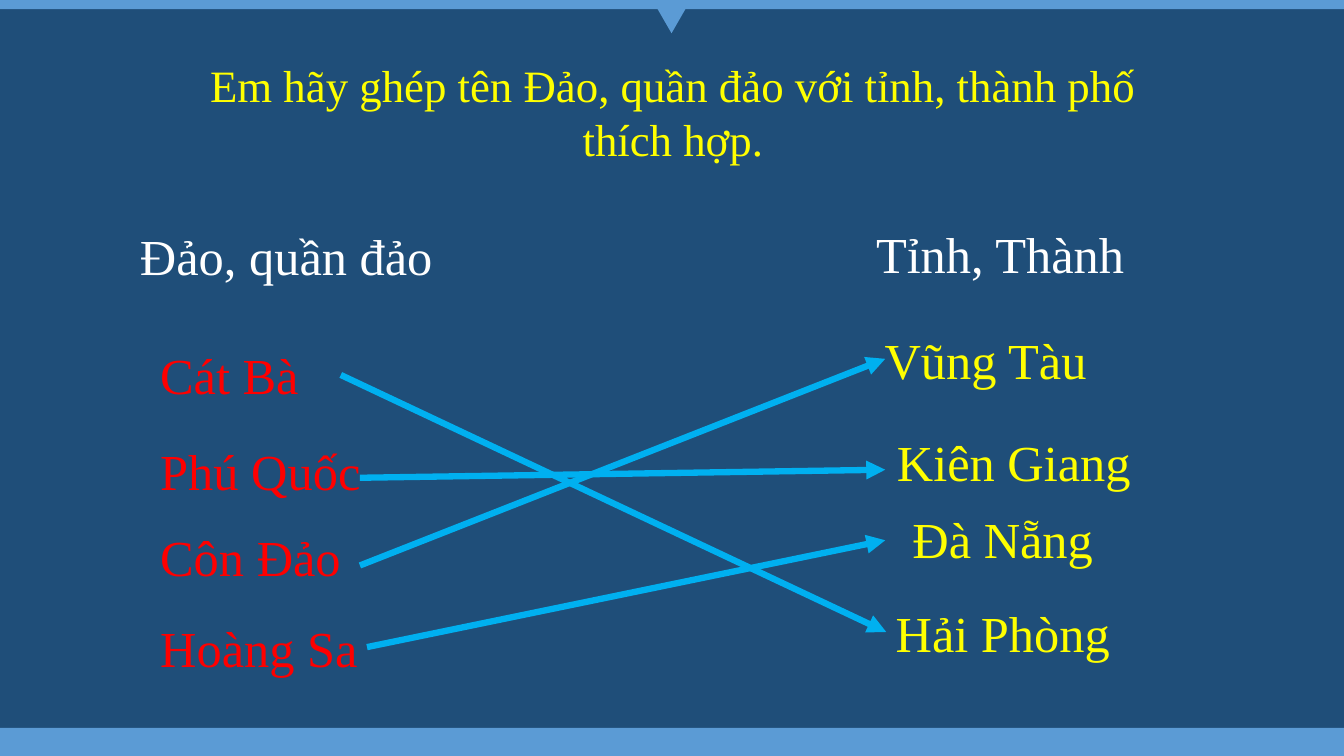
from dataclasses import dataclass
from typing import Any

import lxml.etree
import pptx
import pptx.dml.color
import pptx.enum.shapes
import pptx.enum.text
import pptx.oxml.ns
import pptx.util

Inches = pptx.util.Inches
SHAPES = pptx.enum.shapes.MSO_SHAPE
ALIGN = pptx.enum.text.PP_ALIGN

NAVY, SKY, ARROW_BLUE = "1F4E79", "5B9BD5", "00B0F0"
YELLOW, RED, WHITE = "FFFF00", "FF0000", "FFFFFF"
SLIDE_WIDTH, SLIDE_HEIGHT = 13.33, 7.5
LABEL_HEIGHT = 0.71


@dataclass
class Label:
    text: str
    left: float
    top: float
    width: float
    color: str
    align: Any = ALIGN.LEFT


@dataclass
class Band:
    kind: Any
    left: float
    top: float
    width: float
    height: float
    rotation: float = 0


@dataclass
class Match:
    start: tuple[float, float]
    end: tuple[float, float]


ISLANDS = [("Cát Bà", 3.36), ("Phú Quốc", 4.32), ("Côn Đảo", 5.17), ("Hoàng Sa", 6.07)]

LABELS = [
    Label("Đảo, quần đảo", 1.29, 2.18, 3.27, WHITE),
    Label("Tỉnh, Thành", 8.59, 2.16, 3.08, WHITE),
    *(Label(island, 1.49, top, 2.55, RED) for island, top in ISLANDS),
    Label("Vũng Tàu", 8.59, 3.22, 2.37, YELLOW, ALIGN.CENTER),
    Label("Kiên Giang", 8.78, 4.23, 2.55, YELLOW, ALIGN.CENTER),
    Label("Đà Nẵng", 8.67, 4.99, 2.55, YELLOW, ALIGN.CENTER),
    Label("Hải Phòng", 8.67, 5.92, 2.55, YELLOW, ALIGN.CENTER),
]

BANDS = [
    Band(SHAPES.RECTANGLE, 0, 7.22, SLIDE_WIDTH, 0.28),
    Band(SHAPES.RECTANGLE, 0, 0, SLIDE_WIDTH, 0.09),
    Band(SHAPES.ISOSCELES_TRIANGLE, 6.47, 0, 0.38, 0.33, 180),
]

MATCHES = [
    Match((3.38, 3.72), (8.79, 6.27)),
    Match((3.57, 4.74), (8.78, 4.66)),
    Match((3.57, 5.61), (8.78, 3.56)),
    Match((3.64, 6.42), (8.78, 5.36)),
]


def rgb(color: str) -> pptx.dml.color.RGBColor:
    return pptx.dml.color.RGBColor.from_string(color)


def set_all(target: Any, values: dict[str, Any]) -> None:
    for name, value in values.items():
        setattr(target, name, value)


def write_text(frame: Any, text: str, size: float, color: str, align: Any) -> None:
    set_all(frame, {
        "word_wrap": True,
        "vertical_anchor": pptx.enum.text.MSO_ANCHOR.TOP,
        "auto_size": pptx.enum.text.MSO_AUTO_SIZE.SHAPE_TO_FIT_TEXT,
    })
    paragraph = frame.paragraphs[0]
    paragraph.alignment = align
    run = paragraph.add_run()
    run.text = text
    set_all(run.font, {"name": "Times New Roman", "size": pptx.util.Pt(size)})
    run.font.color.rgb = rgb(color)


def draw_band(slide: Any, band: Band) -> None:
    box = map(Inches, (band.left, band.top, band.width, band.height))
    shape = slide.shapes.add_shape(band.kind, *box)
    shape.rotation = band.rotation
    shape.shadow.inherit = False
    shape.fill.solid()
    shape.fill.fore_color.rgb = rgb(SKY)
    shape.line.fill.background()


def draw_label(slide: Any, label: Label) -> None:
    box = map(Inches, (label.left, label.top, label.width, LABEL_HEIGHT))
    frame = slide.shapes.add_textbox(*box).text_frame
    write_text(frame, label.text, 36, label.color, label.align)


def draw_match(slide: Any, match: Match) -> None:
    ends = map(Inches, (*match.start, *match.end))
    arrow = slide.shapes.add_connector(pptx.enum.shapes.MSO_CONNECTOR.STRAIGHT, *ends)
    arrow.line.width = pptx.util.Pt(4.5)
    arrow.line.color.rgb = rgb(ARROW_BLUE)
    qn = pptx.oxml.ns.qn
    properties = arrow.element.spPr
    lxml.etree.SubElement(properties.find(qn("a:ln")), qn("a:tailEnd"), type="triangle")
    lxml.etree.SubElement(properties, qn("a:effectLst"))


def main() -> None:
    deck = pptx.Presentation()
    set_all(deck, {"slide_width": Inches(SLIDE_WIDTH), "slide_height": Inches(SLIDE_HEIGHT)})
    slide = deck.slides.add_slide(deck.slide_layouts.get_by_name("Title Only"))
    slide.background.fill.solid()
    slide.background.fill.fore_color.rgb = rgb(NAVY)

    for band in BANDS:
        draw_band(slide, band)

    question = slide.shapes.title
    set_all(question, {
        "left": Inches(1.61),
        "top": Inches(0.52),
        "width": Inches(10.13),
        "height": Inches(1.18),
    })
    write_text(
        question.text_frame,
        "Em hãy ghép tên Đảo, quần đảo với tỉnh, thành phố thích hợp.",
        32, YELLOW, ALIGN.CENTER,
    )

    for label in LABELS:
        draw_label(slide, label)
    for match in MATCHES:
        draw_match(slide, match)

    deck.save("out.pptx")


if __name__ == "__main__":
    main()
